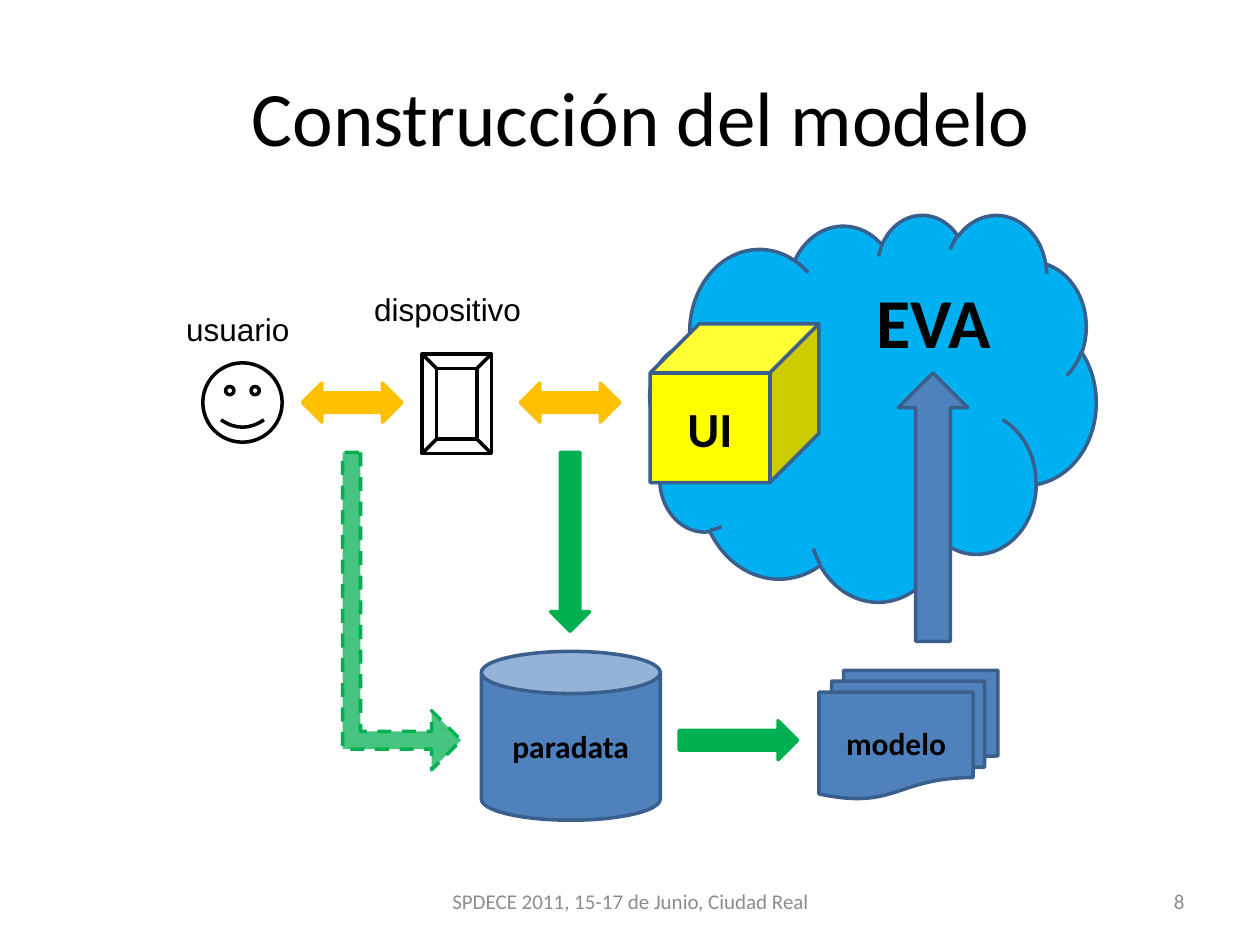
import pptx
import pptx.util
import pptx.dml.color
import pptx.enum.dml
import pptx.enum.shapes
import pptx.enum.text
import pptx.oxml
import pptx.oxml.ns

Inches = pptx.util.Inches
SHAPE = pptx.enum.shapes.MSO_SHAPE
ALIGN = pptx.enum.text.PP_ALIGN
ANCHOR = pptx.enum.text.MSO_ANCHOR

THEME = {
    "black": "000000", "grey": "8C8C8C", "blue": "4F81BD", "edge": "3A5F8C",
    "green": "00B050", "amber": "FFC000", "sky": "00B0F0", "yellow": "FFFF00",
    "body": "Calibri", "label": "Arial", "line": 2,
    "title": 44, "cloud": 40, "cube": 28, "text": 18, "footer": 12,
}

TEXTS = [
    ("Construcción del modelo", (0.59, 0.29, 9, 1.25), "title", "body", "black", ALIGN.CENTER, True),
    ("8", (7.17, 6.95, 2.33, 0.4), "footer", "body", "grey", ALIGN.RIGHT, True),
    ("SPDECE 2011, 15-17 de Junio, Ciudad Real", (3.42, 6.95, 3.17, 0.4),
     "footer", "body", "grey", ALIGN.CENTER, True),
    ("usuario", (1.38, 2.41, 1.03, 0.4), "text", "label", "black", ALIGN.LEFT, False),
    ("dispositivo", (2.87, 2.25, 1.38, 0.4), "text", "label", "black", ALIGN.LEFT, False),
]

SHAPES = [
    {"kind": SHAPE.SMILEY_FACE, "at": (1.61, 2.88, 0.63, 0.63), "line": "black"},
    {"kind": SHAPE.LEFT_RIGHT_ARROW, "at": (4.13, 3.04, 0.79, 0.31), "fill": "amber", "line": "amber"},
    {"kind": SHAPE.FLOWCHART_MULTIDOCUMENT, "at": (6.5, 5.32, 1.42, 1.02), "fill": "blue",
     "text": "modelo", "size": "text"},
    {"kind": SHAPE.DOWN_ARROW, "at": (4.37, 3.59, 0.31, 1.42), "fill": "green", "line": "green"},
    {"kind": SHAPE.CAN, "at": (3.82, 5.17, 1.42, 1.34), "fill": "blue",
     "text": "paradata", "size": "text"},
    {"kind": SHAPE.RIGHT_ARROW, "at": (5.39, 5.72, 0.94, 0.31), "fill": "green", "line": "green"},
    {"kind": SHAPE.CLOUD, "at": (5.16, 1.7, 3.54, 3.07), "fill": "sky",
     "text": "EVA", "size": "cloud", "align": ALIGN.RIGHT, "anchor": ANCHOR.TOP},
    {"kind": SHAPE.CUBE, "at": (5.16, 2.57, 1.34, 1.26), "adj": (0.31,), "fill": "yellow",
     "text": "UI", "size": "cube"},
    {"kind": SHAPE.BEVEL, "at": (3.35, 2.81, 0.55, 0.79), "adj": (0.21,), "line": "black"},
    {"kind": SHAPE.LEFT_RIGHT_ARROW, "at": (2.4, 3.04, 0.79, 0.31), "fill": "amber", "line": "amber"},
    {"kind": SHAPE.BENT_UP_ARROW, "at": (1.93, 4.38, 2.52, 0.94), "adj": (0.15, 0.25, 0.25),
     "fill": "green", "line": "green", "alpha": 72, "dash": True, "rotation": 90},
    {"kind": SHAPE.UP_ARROW, "at": (7.13, 2.96, 0.55, 2.13), "fill": "blue"},
]


def color(name):
    return pptx.dml.color.RGBColor.from_string(THEME[name])


def write(tf, text, size, face="body", ink="black", align=ALIGN.CENTER, bold=False):
    p = tf.paragraphs[0]
    p.text = text
    p.alignment = align
    p.font.size = pptx.util.Pt(THEME[size])
    p.font.name = THEME[face]
    p.font.color.rgb = color(ink)
    p.font.bold = bold


def add_text(s, text, at, size, face, ink, align, framed):
    tf = s.shapes.add_textbox(*map(Inches, at)).text_frame
    tf.word_wrap = framed
    if framed:
        tf.vertical_anchor = ANCHOR.MIDDLE
    else:
        tf.auto_size = pptx.enum.text.MSO_AUTO_SIZE.SHAPE_TO_FIT_TEXT
    write(tf, text, size, face, ink, align)


def add_shape(s, item):
    sp = s.shapes.add_shape(item["kind"], *map(Inches, item["at"]))
    sp.shadow.inherit = False
    sp.rotation = item.get("rotation", 0)
    for i, value in enumerate(item.get("adj", ())):
        sp.adjustments[i] = value
    if "fill" in item:
        sp.fill.solid()
        sp.fill.fore_color.rgb = color(item["fill"])
    else:
        sp.fill.background()
    if "alpha" in item:
        clr = sp.fill._xPr.find(".//" + pptx.oxml.ns.qn("a:srgbClr"))
        alpha = pptx.oxml.parse_xml("<a:alpha %s val='%d'/>" % (
            pptx.oxml.ns.nsdecls("a"), item["alpha"] * 1000))
        clr.append(alpha)
    sp.line.color.rgb = color(item.get("line", "edge"))
    sp.line.width = pptx.util.Pt(THEME["line"])
    if item.get("dash"):
        sp.line.dash_style = pptx.enum.dml.MSO_LINE.DASH
    if "text" in item:
        tf = sp.text_frame
        tf.word_wrap = True
        tf.vertical_anchor = item.get("anchor", ANCHOR.MIDDLE)
        write(tf, item["text"], item["size"], align=item.get("align", ALIGN.CENTER), bold=True)


def main():
    prs = pptx.Presentation()
    prs.slide_width, prs.slide_height = Inches(10), Inches(7.5)
    s = prs.slides.add_slide(prs.slide_layouts[6])
    for item in SHAPES:
        add_shape(s, item)
    for item in TEXTS:
        add_text(s, *item)
    prs.save("out.pptx")


if __name__ == "__main__":
    main()
